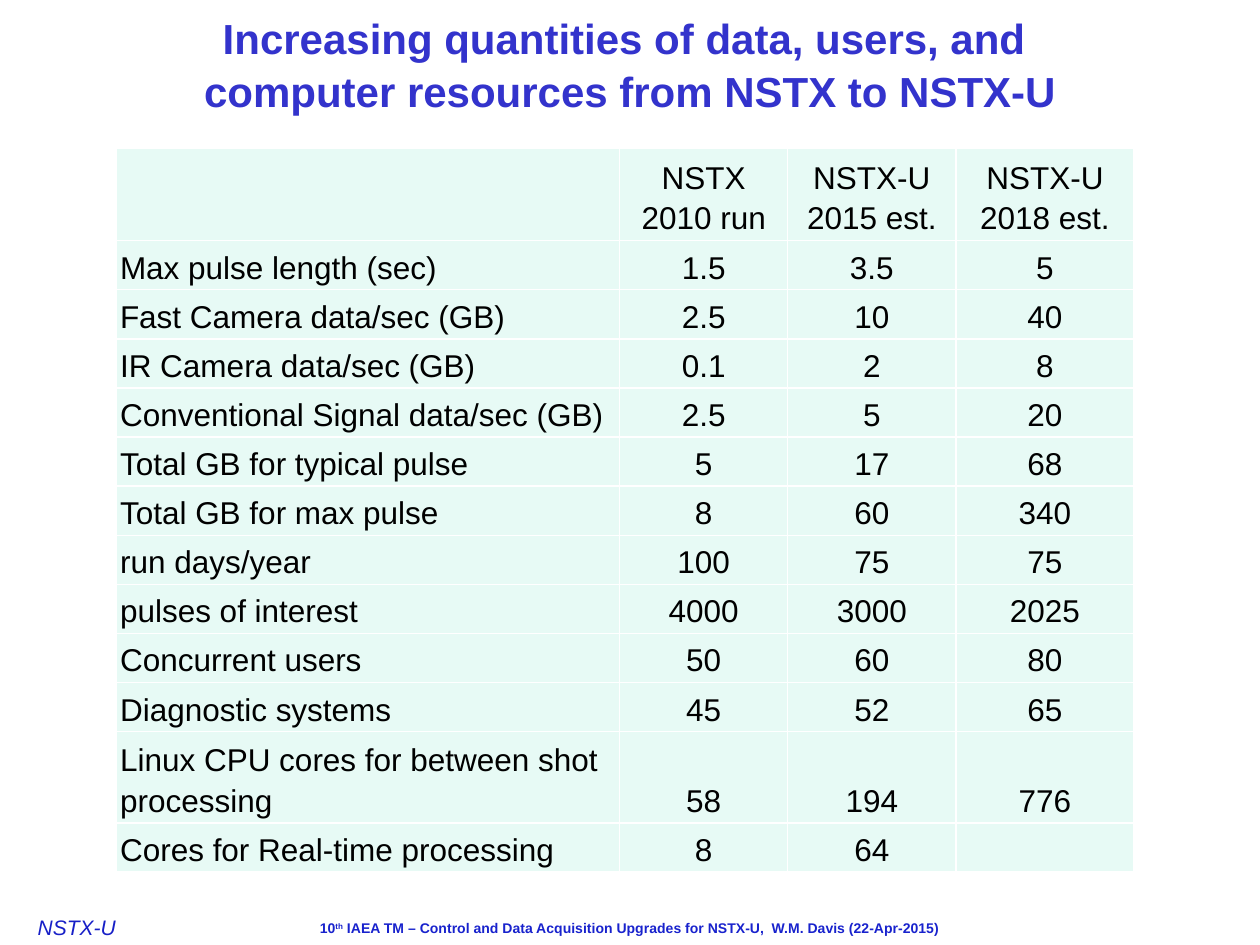
from pptx import Presentation
from pptx.dml.color import RGBColor
from pptx.enum.text import MSO_ANCHOR, MSO_AUTO_SIZE, PP_ALIGN
from pptx.oxml import parse_xml
from pptx.oxml.ns import nsdecls
from pptx.util import Cm, Pt

TITLE = RGBColor(0x33, 0x33, 0xCC)
MARK = RGBColor(0x17, 0x1F, 0xC7)
FOOT = RGBColor(0x18, 0x22, 0xCD)
MINT = RGBColor(0xE7, 0xFA, 0xF5)
WHITE = RGBColor(0xFF, 0xFF, 0xFF)
BLACK = RGBColor(0, 0, 0)

WIDTHS = [10.15, 3.39, 3.39, 3.59]
TALL = {0: 1.87, 11: 1.84}
ROW = 0.99
DATA = [
    ("", "NSTX 2010 run", "NSTX-U 2015 est.", "NSTX-U 2018 est."),
    ("Max pulse length (sec)", "1.5", "3.5", "5"),
    ("Fast Camera data/sec (GB)", "2.5", "10", "40"),
    ("IR Camera data/sec (GB)", "0.1", "2", "8"),
    ("Conventional Signal data/sec (GB)", "2.5", "5", "20"),
    ("Total GB for typical pulse", "5", "17", "68"),
    ("Total GB for max pulse", "8", "60", "340"),
    ("run days/year", "100", "75", "75"),
    ("pulses of interest", "4000", "3000", "2025"),
    ("Concurrent users", "50", "60", "80"),
    ("Diagnostic systems", "45", "52", "65"),
    ("Linux CPU cores for between shot processing", "58", "194", "776"),
    ("Cores for Real-time processing", "8", "64", ""),
]


def style(para, size, color, bold=False, italic=False):
    font = para.font
    font.name, font.size = "Arial", Pt(size)
    font.bold, font.italic = bold, italic
    font.color.rgb = color


def pad(frame, side, top):
    frame.margin_left = frame.margin_right = Cm(side)
    frame.margin_top = frame.margin_bottom = Cm(top)


def add_title(slide, left, top, width, height):
    title = slide.shapes.title
    title.left, title.top = Cm(left), Cm(top)
    title.width, title.height = Cm(width), Cm(height)
    frame = title.text_frame
    frame.auto_size = MSO_AUTO_SIZE.NONE
    frame.vertical_anchor = MSO_ANCHOR.MIDDLE
    pad(frame, 0.25, 0.13)
    para = frame.paragraphs[0]
    para.alignment = PP_ALIGN.CENTER
    para.line_spacing = 1.05
    para.add_run().text = "Increasing quantities of data, users, and "
    para.add_line_break()
    para.add_run().text = "computer resources from NSTX to NSTX-U"
    style(para, 24, TITLE, bold=True)


def edge(cell):
    props = cell._tc.get_or_add_tcPr()
    for spot, side in enumerate("LRTB"):
        props.insert(spot, parse_xml(
            f'<a:ln{side} {nsdecls("a")} w="{Pt(1)}"><a:solidFill>'
            f'<a:srgbClr val="{WHITE}"/></a:solidFill></a:ln{side}>'))


def fill_cell(cell, text, align):
    cell.fill.solid()
    cell.fill.fore_color.rgb = MINT
    edge(cell)
    pad(cell, 0.08, 0.08)
    cell.vertical_anchor = MSO_ANCHOR.BOTTOM
    cell.text = text
    para = cell.text_frame.paragraphs[0]
    para.alignment = align
    para.line_spacing = 1.15
    style(para, 18, BLACK)


def add_grid(slide, left, top):
    tall = [TALL.get(row, ROW) for row in range(len(DATA))]
    table = slide.shapes.add_table(
        len(DATA), len(WIDTHS), Cm(left), Cm(top),
        Cm(sum(WIDTHS)), Cm(sum(tall))).table
    for col, width in zip(table.columns, WIDTHS):
        col.width = Cm(width)
    for row, height, texts in zip(table.rows, tall, DATA):
        row.height = Cm(height)
        for spot, (cell, text) in enumerate(zip(row.cells, texts)):
            fill_cell(cell, text, PP_ALIGN.CENTER if spot else PP_ALIGN.LEFT)


def add_label(slide, left, top, width, height, side=0, edge_pad=0):
    frame = slide.shapes.add_textbox(
        Cm(left), Cm(top), Cm(width), Cm(height)).text_frame
    frame.word_wrap = True
    pad(frame, side, edge_pad)
    return frame.paragraphs[0]


def add_footer(slide, left, top, width):
    mark = add_label(slide, left, top + 0.03, 2.2, 0.5)
    mark.add_run().text = "NSTX-U"
    style(mark, 12, MARK, italic=True)

    note = add_label(slide, left + 4.32, top, width - 8.64, 0.6, 0.25, 0.13)
    note.alignment = PP_ALIGN.CENTER
    note.add_run().text = "10"
    power = note.add_run()
    power.text = "th"
    power.font._element.set("baseline", "30000")
    note.add_run().text = (" IAEA TM – Control and Data Acquisition Upgrades "
                           "for NSTX-U,  W.M. Davis (22-Apr-2015)")
    style(note, 8, FOOT, bold=True)


def main():
    deck = Presentation()
    deck.slide_width, deck.slide_height = Cm(25.4), Cm(19.05)
    slide = deck.slides.add_slide(deck.slide_layouts[5])
    add_title(slide, 0, 0, 25.4, 2.54)
    add_grid(slide, 2.34, 2.98)
    add_footer(slide, 0.76, 18.41, 23.88)
    deck.save("out.pptx")


if __name__ == "__main__":
    main()
